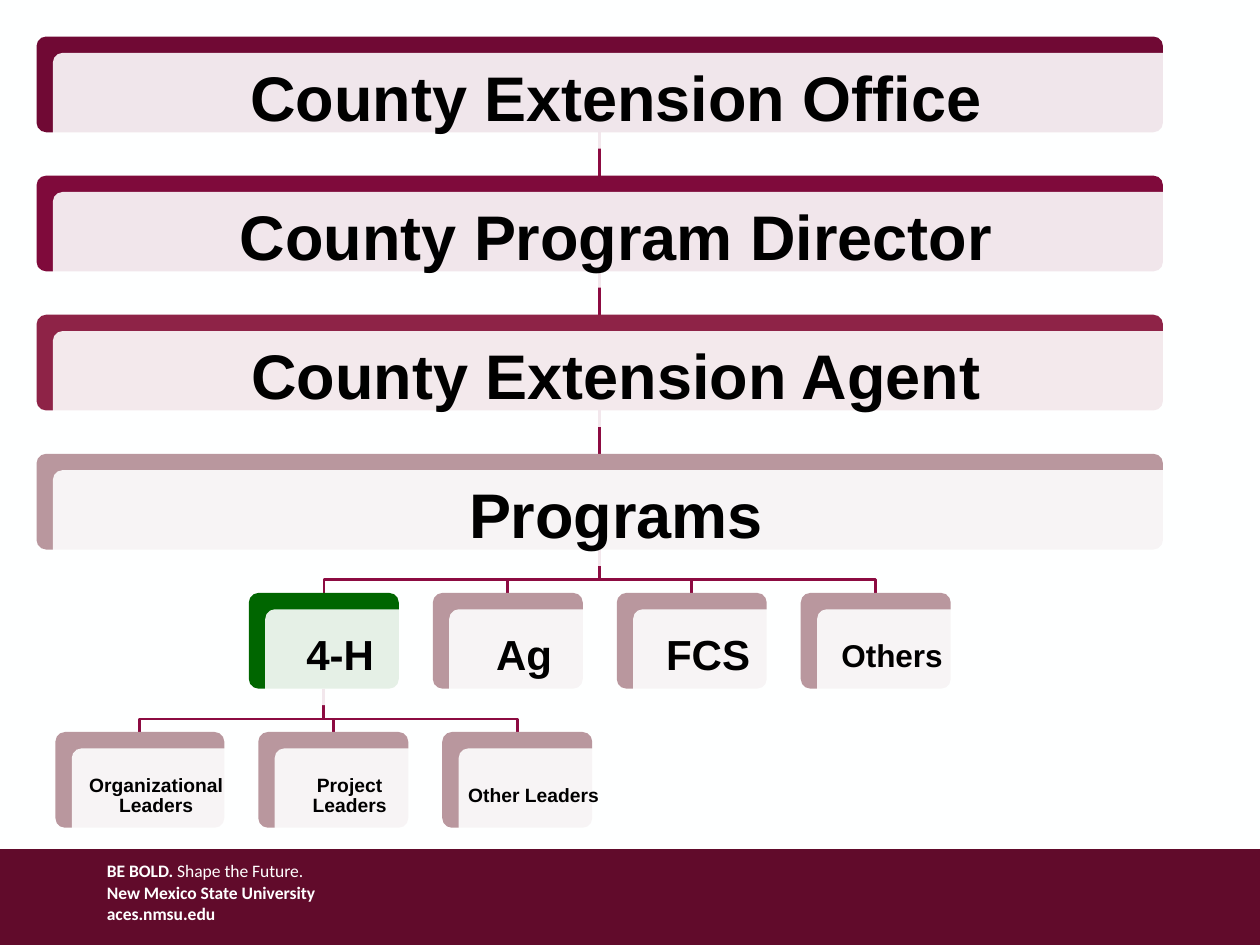
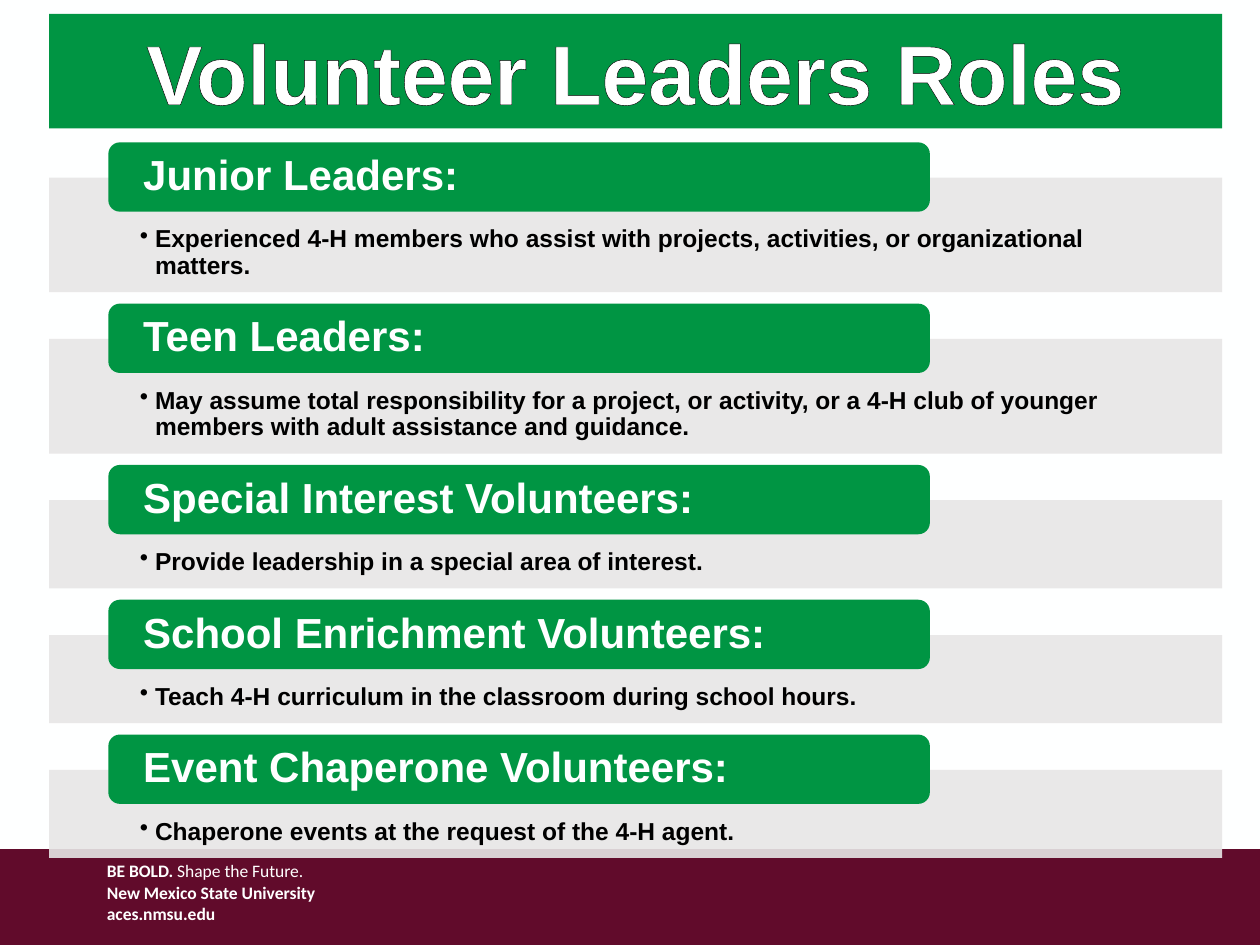
from lxml import etree
from pptx import Presentation
from pptx import util as u
from pptx.dml.color import RGBColor
from pptx.enum import shapes, text
from pptx.oxml.ns import qn

W, H = 10, 7.5
C = {
    "paper": "FEFFFF", "white": "FFFFFF", "ink": "000000", "footer": "610B2B",
    "line": "8C0B41", "office": "700934", "director": "7F0A3B", "agent": "8E2347",
    "rose": "B9979E", "clover": "006600", "green": "009543", "band": "E7E6E6",
}
RECT, ROUND = shapes.MSO_SHAPE.RECTANGLE, shapes.MSO_SHAPE.ROUNDED_RECTANGLE
LEFT, CENTER = text.PP_ALIGN.LEFT, text.PP_ALIGN.CENTER


def panel(s, kind, box, color, alpha=100):
    sp = s.shapes.add_shape(kind, *[u.Inches(v) for v in box])
    sp.shadow.inherit = False
    sp.line.fill.background()
    sp.fill.solid()
    sp.fill.fore_color.rgb = RGBColor.from_string(C[color])
    if alpha < 100:
        clr = sp._element.spPr.find(".//" + qn("a:srgbClr"))
        etree.SubElement(clr, qn("a:alpha"), val=str(alpha * 1000))
    return sp


def write(sp, words, size, color, align, insets, spacing=0.9):
    tf = sp.text_frame
    tf.word_wrap = True
    tf.margin_left, tf.margin_top, tf.margin_right, tf.margin_bottom = [u.Inches(v) for v in insets]
    tf.text = words
    p = tf.paragraphs[0]
    p.alignment = align
    p.line_spacing = spacing
    r = p.runs[0]
    r.font.name, r.font.size, r.font.bold = "Arial", u.Pt(size), True
    r.font.color.rgb = RGBColor.from_string(C[color])
    return p


prs = Presentation()
prs.slide_width, prs.slide_height = u.Inches(W), u.Inches(H)
bg = prs.slide_master.background.fill
bg.solid()
bg.fore_color.rgb = RGBColor.from_string(C["paper"])

footer_lines = [
    [("BE BOLD. ", True), ("Shape the Future.", False)],
    [("New Mexico State University", True)],
    [("aces.nmsu.edu", True)],
]
footer_top = 6.74
for _ in range(2):
    s = prs.slides.add_slide(prs.slide_layouts[6])
    panel(s, RECT, (0, footer_top, W, H - footer_top), "footer")
    tf = s.shapes.add_textbox(u.Inches(0.75), u.Inches(6.78), u.Inches(2.88), u.Inches(0.72)).text_frame
    tf.word_wrap = True
    for i, line in enumerate(footer_lines):
        p = tf.add_paragraph() if i else tf.paragraphs[0]
        for words, bold in line:
            r = p.add_run()
            r.text = words
            r.font.name, r.font.size, r.font.bold = "Calibri", u.Pt(10), bold
            r.font.color.rgb = RGBColor.from_string(C["white"])
chart_slide, roles_slide = prs.slides

s = chart_slide
axis, program_axis = 4.76, 2.57
top, last_top = 0.29, 5.81
row_step = (last_top - top) / 5
card_h, gap, lift, bend = 0.76, 0.27, 0.13, 0.24
wide, narrow = 8.94, 1.19
rows = [
    (axis, [("County Extension Office", wide, "office", 36, 0.15)]),
    (axis, [("County Program Director", wide, "director", 36, 0.15)]),
    (axis, [("County Extension Agent", wide, "agent", 36, 0.15)]),
    (axis, [("Programs", wide, "rose", 36, 0.15)]),
    (axis, [("4-H", narrow, "clover", 24, 0.1), ("Ag", narrow, "rose", 24, 0.1),
            ("FCS", narrow, "rose", 24, 0.1), ("Others", narrow, "rose", 18, 0.07)]),
    (program_axis, [("Organizational Leaders", 1.34, "rose", 11, 0.05),
                    ("Project Leaders", narrow, "rose", 11, 0.05),
                    ("Other Leaders", narrow, "rose", 11, 0.05)]),
]

cards = []
for row, (parent_x, items) in enumerate(rows):
    y = top + row * row_step
    x = parent_x - (sum(item[1] for item in items) + gap * (len(items) - 1)) / 2
    for words, w, color, size, inset in items:
        cards.append((x, y, w, words, color, size, inset))
        if row:
            child_x, parent_y = x + w / 2, y - row_step + card_h
            if len(items) == 1:
                link = s.shapes.add_connector(
                    shapes.MSO_CONNECTOR.STRAIGHT,
                    u.Inches(axis), u.Inches(parent_y), u.Inches(axis), u.Inches(y))
            else:
                fb = s.shapes.build_freeform(u.Inches(parent_x), u.Inches(parent_y))
                turns = [(parent_x, parent_y + bend), (child_x, parent_y + bend), (child_x, y)]
                fb.add_line_segments([(u.Inches(a), u.Inches(b)) for a, b in turns], close=False)
                link = fb.convert_to_shape()
                link.fill.background()
            link.line.color.rgb = RGBColor.from_string(C["line"])
            link.line.width = u.Pt(1.5)
            etree.SubElement(link._element.spPr, qn("a:effectLst"))
        x += w + gap

for x, y, w, words, color, size, inset in cards:
    back = panel(s, ROUND, (x, y, w, card_h), color)
    front = panel(s, ROUND, (x + lift, y + lift, w, card_h), "paper", 90)
    back.adjustments[0] = front.adjustments[0] = 0.1
    write(front, words, size, "ink", CENTER, [inset] * 4)

s = roles_slide
left, band_w = 0.39, 9.31
roles = [
    ("Junior Leaders:", 0.91,
     "Experienced 4-H members who assist with projects, activities, or organizational matters."),
    ("Teen Leaders:", 0.91,
     "May assume total responsibility for a project, or activity, or a 4-H club of younger "
     "members with adult assistance and guidance."),
    ("Special Interest Volunteers:", 0.7, "Provide leadership in a special area of interest."),
    ("School Enrichment Volunteers:", 0.7, "Teach 4-H curriculum in the classroom during school hours."),
    ("Event Chaperone Volunteers:", 0.7, "Chaperone events at the request of the 4-H agent."),
]
y = 1.41
for heading, band_h, duty in roles:
    band = panel(s, RECT, (left, y, band_w, band_h), "band", 90)
    band.text_frame.vertical_anchor = text.MSO_ANCHOR.TOP
    p = write(band, duty, 14, "ink", LEFT, (0.72, 0.39, 0.72, 0.11))
    pPr = p._p.get_or_add_pPr()
    pPr.set("marL", str(u.Inches(0.12)))
    pPr.set("indent", str(-u.Inches(0.12)))
    etree.SubElement(pPr, qn("a:buChar"), char="•")
    tab = panel(s, ROUND, (0.86, y - 0.28, 6.52, 0.55), "green")
    write(tab, heading, 24, "paper", LEFT, (0.25, 0, 0.25, 0))
    y += band_h + 0.37

title = panel(s, RECT, (left, 0.11, band_w, 0.91), "green")
p = write(title, "Volunteer Leaders Roles", 48, "white", CENTER, (0.1, 0.05, 0.1, 0.05), 1.0)
ln = etree.Element(qn("a:ln"), w=str(u.Pt(0.75)))
etree.SubElement(etree.SubElement(ln, qn("a:solidFill")), qn("a:srgbClr"), val=C["ink"])
p.runs[0]._r.get_or_add_rPr().insert(0, ln)

prs.save("out.pptx")
